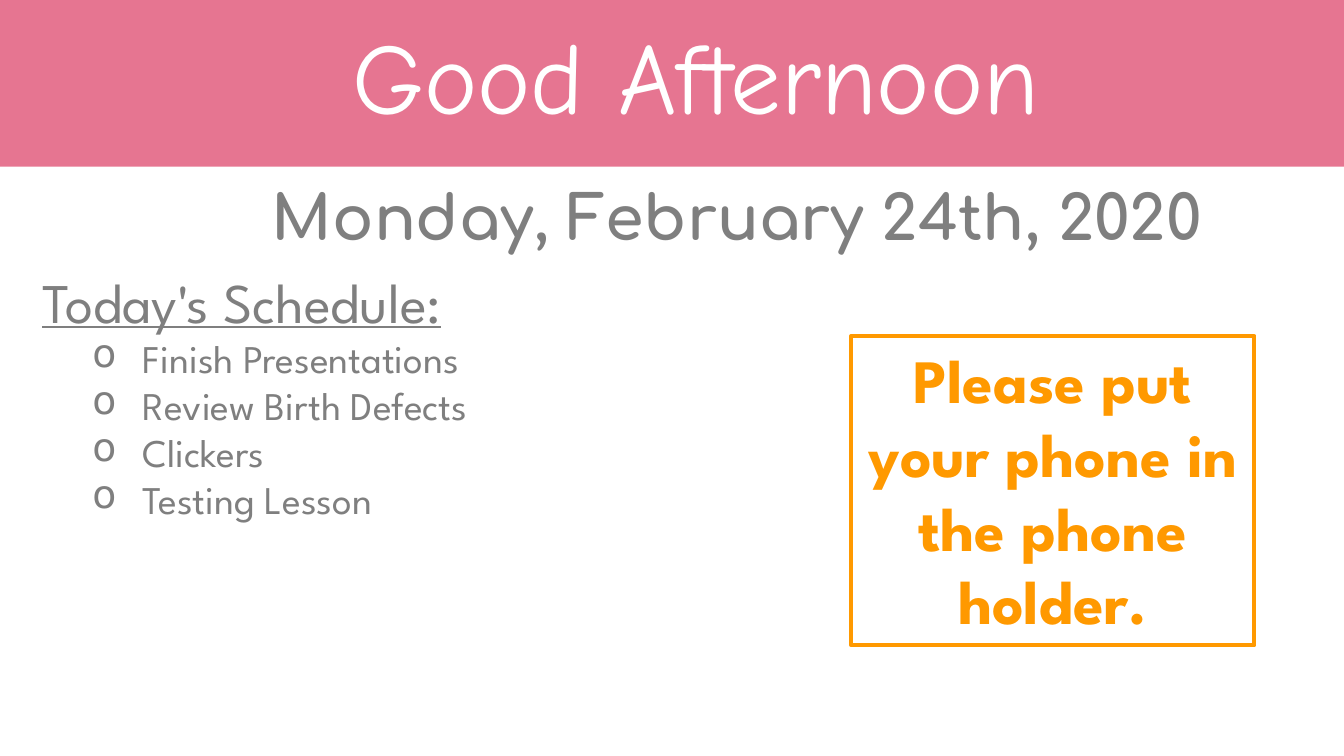
from lxml import etree
from pptx import Presentation
from pptx import util as u
from pptx.dml.color import RGBColor
from pptx.enum import shapes, text
from pptx.oxml.ns import qn

PX = 9525
PINK, GRAY, ORANGE, WHITE = "E67591", "7F7F7F", "FF9900", "FFFFFF"
CENTER = text.PP_ALIGN.CENTER
SCHEDULE = ["Finish Presentations", "Review Birth Defects", "Clickers", "Testing Lesson"]


def color(target, value):
    """Give a font, fill or line a solid hex colour."""
    if hasattr(target, "solid"):
        target.solid()
        target.fore_color.rgb = RGBColor.from_string(value)
    else:
        target.color.rgb = RGBColor.from_string(value)


def px(*lengths):
    """Turn px lengths into EMU."""
    return [u.Emu(length * PX) for length in lengths]


def add_rectangle(page, box):
    """Add a plain rectangle without a shadow."""
    shape = page.shapes.add_shape(shapes.MSO_SHAPE.RECTANGLE, *px(*box))
    shape.shadow.inherit = False
    return shape


def prepare_frame(shape, anchor=text.MSO_ANCHOR.TOP):
    """Set wrapping, margins and anchor, and return the text frame."""
    frame = shape.text_frame
    frame.word_wrap = True
    frame.margin_left, frame.margin_right = px(7, 7)
    frame.margin_top, frame.margin_bottom = px(4, 4)
    frame.vertical_anchor = anchor
    return frame


def write(para, words, face, size, value, bold=False, align=None):
    """Fill a paragraph with words in one style."""
    para.text = words
    para.alignment = align
    font = para.font
    font.name, font.size, font.bold = face, u.Pt(size), bold
    color(font, value)


def add_bullet(para, left, hanging):
    """Give a paragraph a hanging gray letter bullet."""
    para.level = 1
    props = para._p.get_or_add_pPr()
    props.set("marL", str(left * PX))
    props.set("indent", str(-hanging * PX))
    tint = etree.Element(qn("a:buClr"))
    etree.SubElement(tint, qn("a:srgbClr"), val=GRAY)
    mark = etree.Element(qn("a:buChar"), char="o")
    props.insert(0, tint)
    props.insert(1, mark)


def add_banner(page, box):
    """Draw the pink band with the greeting."""
    left, top, width, height = box
    band = add_rectangle(page, box)
    color(band.fill, PINK)
    band.line.fill.background()
    title = page.shapes.add_textbox(*px(left + 83, top + 6, width - 132, height - 14))
    para = prepare_frame(title, text.MSO_ANCHOR.MIDDLE).paragraphs[0]
    write(para, "Good Afternoon", "Comic Neue", 54, WHITE, align=CENTER)
    para.line_spacing = 0.9


def add_date(page, box):
    """Write the date line."""
    para = prepare_frame(page.shapes.add_textbox(*px(*box))).paragraphs[0]
    write(para, "Monday, February 24th, 2020", "Comfortaa", 33, GRAY, True, CENTER)


def add_schedule(page, box):
    """Write the schedule heading and its bulleted items."""
    frame = prepare_frame(page.shapes.add_textbox(*px(*box)))
    heading = frame.paragraphs[0]
    write(heading, "Today's Schedule:", "League Spartan", 30, GRAY)
    heading.font.underline = True
    for item in SCHEDULE:
        para = frame.add_paragraph()
        write(para, item, "League Spartan", 21, GRAY)
        add_bullet(para, 72, 36)


def add_reminder(page, box):
    """Draw the outlined phone reminder."""
    card = add_rectangle(page, box)
    card.fill.background()
    color(card.line, ORANGE)
    card.line.width = u.Pt(2.25)
    para = prepare_frame(card).paragraphs[0]
    write(para, "Please put your phone in the phone holder.",
          "League Spartan", 33, ORANGE, True, CENTER)


def main():
    """Build and save the deck."""
    deck = Presentation()
    deck.slide_width, deck.slide_height = px(960, 540)
    page = deck.slides.add_slide(deck.slide_layouts[6])
    add_banner(page, (0, 0, 960, 119))
    add_schedule(page, (23, 187, 539, 213))
    add_date(page, (158, 124, 737, 59))
    add_reminder(page, (608, 240, 288, 221))
    deck.save("out.pptx")


if __name__ == "__main__":
    main()
